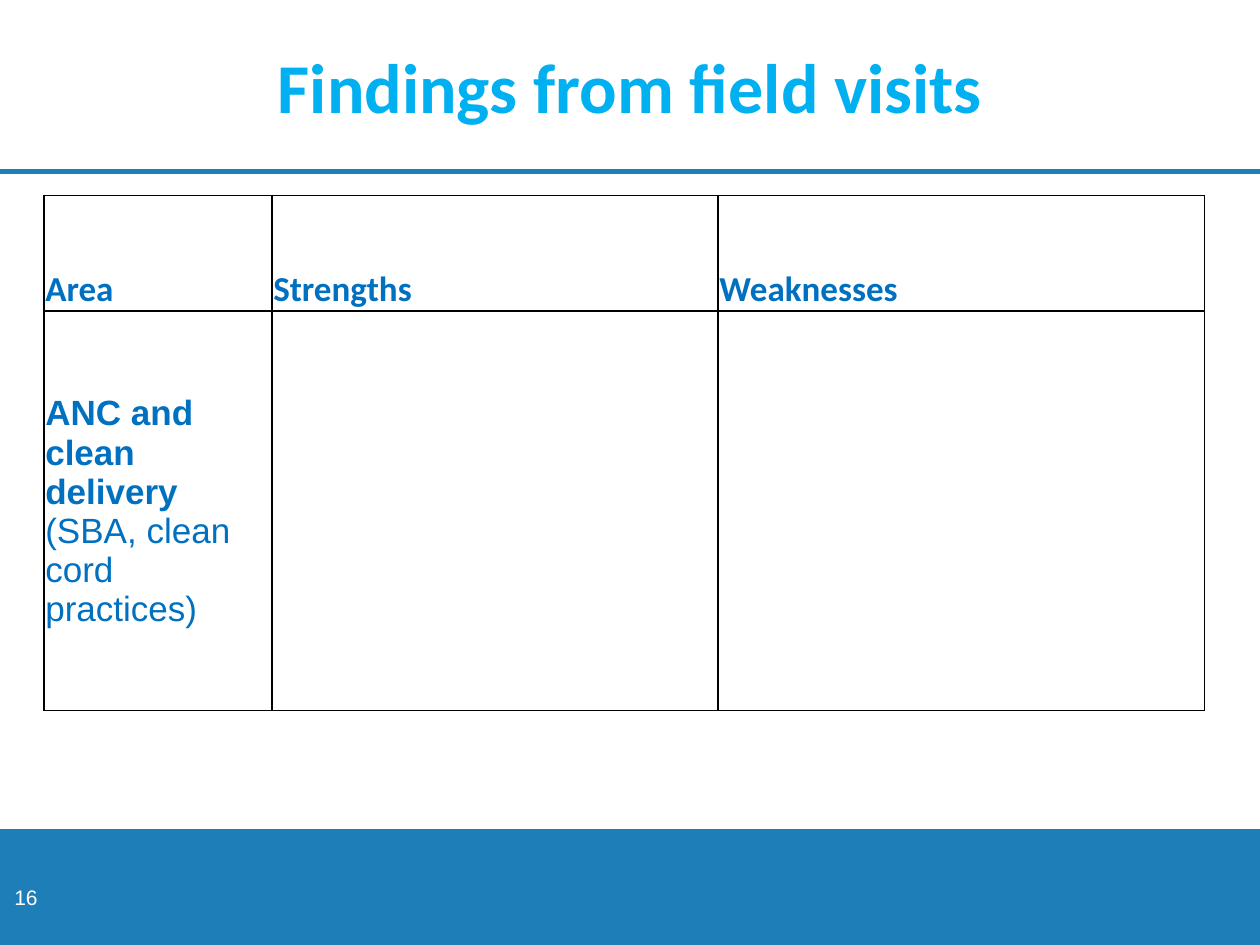
from lxml.etree import SubElement
from pptx import Presentation
from pptx.dml.color import RGBColor
from pptx.enum.shapes import MSO_CONNECTOR, MSO_SHAPE
from pptx.enum.text import MSO_ANCHOR, PP_ALIGN
from pptx.oxml import parse_xml
from pptx.oxml.ns import nsdecls, qn
from pptx.util import Pt

COLORS = {
    "band": "1E7FB8",
    "title": "00B0F0",
    "title_shadow": "99D4F0",
    "table_text": "0070C0",
    "border": "000000",
    "white": "FFFFFF",
}
SLIDE_WIDTH, SLIDE_HEIGHT = 720, 540
COLUMN_WIDTHS = [130.3, 254.9, 277.9]
ROW_HEIGHTS = [66.2, 228.2]
HEADERS = ["Area", "Strengths", "Weaknesses"]
AREA_RUNS = [("ANC and clean delivery ", True), ("(SBA, clean cord practices)", False)]


def rgb(name):
    return RGBColor.from_string(COLORS[name])


def set_font(font, name, size, color, bold=None):
    font.name = name
    font.size = Pt(size)
    font.bold = bold
    font.color.rgb = rgb(color)


def set_margins(target, left, top, right, bottom):
    target.margin_left, target.margin_right = Pt(left), Pt(right)
    target.margin_top, target.margin_bottom = Pt(top), Pt(bottom)


def add_band(slide, top):
    band = slide.shapes.add_shape(
        MSO_SHAPE.RECTANGLE, Pt(0), Pt(top), Pt(SLIDE_WIDTH), Pt(SLIDE_HEIGHT - top))
    band.shadow.inherit = False
    band.fill.solid()
    band.fill.fore_color.rgb = rgb("band")
    band.line.fill.background()


def add_rule(slide, top):
    rule = slide.shapes.add_connector(
        MSO_CONNECTOR.STRAIGHT, Pt(0), Pt(top), Pt(SLIDE_WIDTH), Pt(top))
    rule.line.color.rgb = rgb("band")
    rule.line.width = Pt(3)
    SubElement(rule._element.spPr, qn("a:effectLst"))


def add_text_shadow(font_element):
    shadow = parse_xml(
        f'<a:effectLst {nsdecls("a")}><a:outerShdw dist="25400" dir="2700000">'
        f'<a:srgbClr val="{COLORS["title_shadow"]}"/></a:outerShdw></a:effectLst>')
    font_element.find(qn("a:solidFill")).addnext(shadow)


def format_title(slide, text):
    title = slide.shapes.title
    title.left, title.top = Pt(0), Pt(0)
    title.width, title.height = Pt(SLIDE_WIDTH), Pt(97.2)
    frame = title.text_frame
    frame.word_wrap = True
    frame.vertical_anchor = MSO_ANCHOR.MIDDLE
    set_margins(frame, 0, 0, 0, 0)
    paragraph = frame.paragraphs[0]
    paragraph.alignment = PP_ALIGN.CENTER
    run = paragraph.add_run()
    run.text = text
    set_font(run.font, "Calibri", 40, "title", True)
    add_text_shadow(run._r.rPr)


def add_page_number(slide, text):
    box = slide.shapes.add_textbox(Pt(-45.4), Pt(502.6), Pt(73.4), Pt(37.4))
    frame = box.text_frame
    frame.word_wrap = True
    set_margins(frame, 6.5, 3, 6.5, 3)
    paragraph = frame.paragraphs[0]
    paragraph.text = text
    paragraph.alignment = PP_ALIGN.RIGHT
    set_font(paragraph.font, "Arial", 12, "white")


def format_cell(cell, anchor):
    set_margins(cell, 0.7, 0.7, 0.7, 0)
    cell.vertical_anchor = anchor
    properties = cell._tc.get_or_add_tcPr()
    for side in ("lnL", "lnR", "lnT", "lnB"):
        border = SubElement(properties, qn(f"a:{side}"), w=str(Pt(1)))
        fill = SubElement(border, qn("a:solidFill"))
        SubElement(fill, qn("a:srgbClr"), val=COLORS["border"])
    cell.fill.background()


def add_findings_table(slide):
    frame = slide.shapes.add_table(
        len(ROW_HEIGHTS), len(COLUMN_WIDTHS), Pt(25.2), Pt(111.6),
        Pt(sum(COLUMN_WIDTHS)), Pt(sum(ROW_HEIGHTS)))
    table = frame.table
    table.horz_banding = False
    table.first_row = False
    for column, width in zip(table.columns, COLUMN_WIDTHS):
        column.width = Pt(width)
    for row, height, anchor in zip(
            table.rows, ROW_HEIGHTS, (MSO_ANCHOR.BOTTOM, MSO_ANCHOR.MIDDLE)):
        row.height = Pt(height)
        for cell in row.cells:
            format_cell(cell, anchor)
    for cell, header in zip(table.rows[0].cells, HEADERS):
        paragraph = cell.text_frame.paragraphs[0]
        paragraph.text = header
        set_font(paragraph.font, "Calibri", 20, "table_text", True)
    paragraph = table.cell(1, 0).text_frame.paragraphs[0]
    for text, bold in AREA_RUNS:
        run = paragraph.add_run()
        run.text = text
        set_font(run.font, "Arial", 20, "table_text", bold)


def main():
    presentation = Presentation()
    presentation.slide_width = Pt(SLIDE_WIDTH)
    presentation.slide_height = Pt(SLIDE_HEIGHT)
    slide = presentation.slides.add_slide(presentation.slide_layouts[5])
    add_rule(slide, 97.9)
    add_band(slide, 473.8)
    format_title(slide, "Findings from field visits")
    add_page_number(slide, "16")
    add_findings_table(slide)
    presentation.save("out.pptx")


if __name__ == "__main__":
    main()
